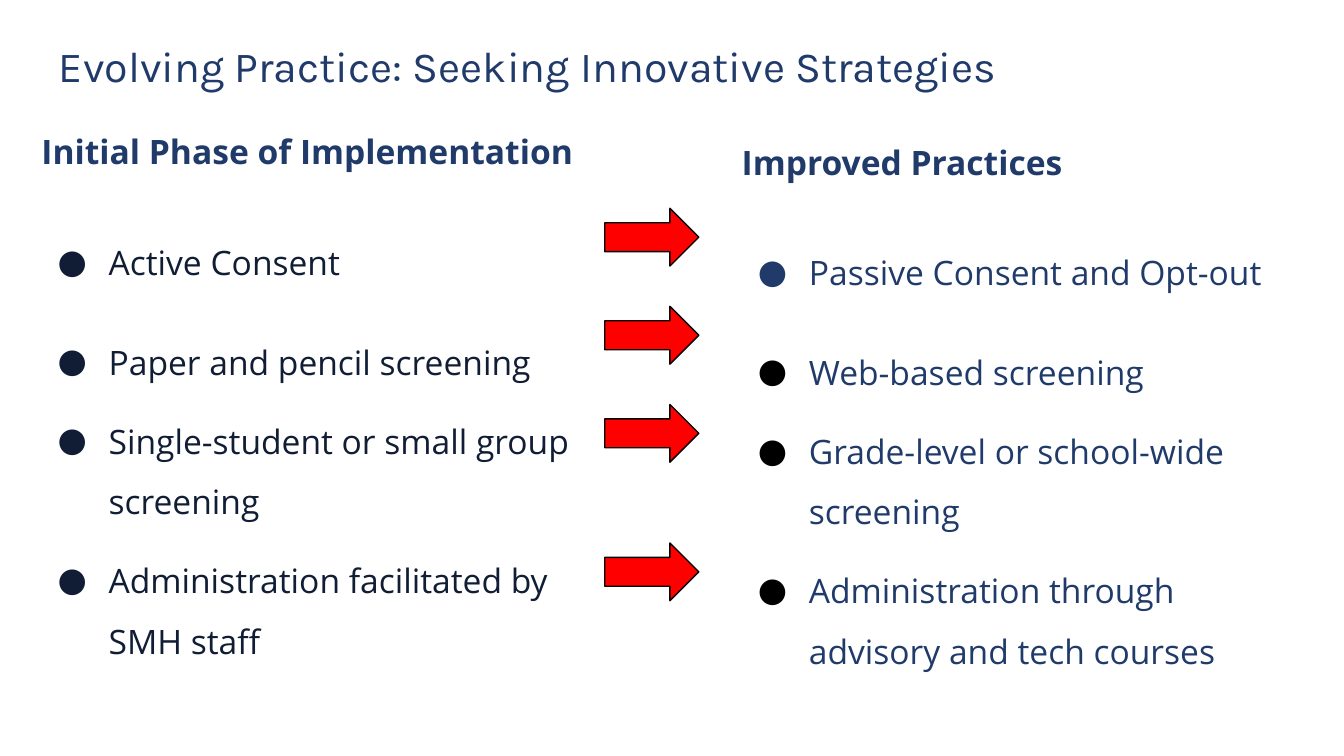
from lxml import etree
from pptx import Presentation
from pptx.dml.color import RGBColor
from pptx.enum.shapes import MSO_SHAPE
from pptx.enum.text import MSO_ANCHOR
from pptx.oxml.ns import qn
from pptx.util import Inches, Pt

RIGHT_ARROW = MSO_SHAPE.RIGHT_ARROW
TOP, BOTTOM = MSO_ANCHOR.TOP, MSO_ANCHOR.BOTTOM
COLORS = {"navy": "203B6A", "ink": "101D34", "red": "FF0000", "black": "000000"}
ARROW_TOPS = [1.55, 2.28, 3.01, 4.04]
LINE_SPACINGS = [2.0, 2.0, 1.5, 1.5]
INITIAL = [
    "Active Consent",
    "Paper and pencil screening",
    "Single-student or small group screening",
    "Administration facilitated by SMH staff",
]
IMPROVED = [
    "Passive Consent and Opt-out",
    "Web-based screening",
    "Grade-level or school-wide screening",
    "Administration through advisory and tech courses",
]


def rgb(name):
    """Return the named colour."""
    return RGBColor.from_string(COLORS[name])


def add_box(s, left, top, width, height, anchor=TOP):
    """Add a wrapping text box and return its text frame."""
    sp = s.shapes.add_textbox(Inches(left), Inches(top), Inches(width), Inches(height))
    tf = sp.text_frame
    tf.word_wrap = True
    tf.vertical_anchor = anchor
    tf.margin_left = tf.margin_right = Inches(0.1)
    tf.margin_top = tf.margin_bottom = Inches(0.1)
    return tf


def write(p, text, size=18, font="Open Sans", color="navy", bold=False,
          spacing=0.9, before=0, after=0):
    """Write one formatted run into a paragraph."""
    p.line_spacing = spacing
    p.space_before, p.space_after = Pt(before), Pt(after)
    r = p.add_run()
    r.text = text
    r.font.size, r.font.name, r.font.bold = Pt(size), font, bold
    r.font.color.rgb = rgb(color)


def add_bullet(p, color):
    """Give a paragraph a hanging round bullet."""
    pPr = p._p.get_or_add_pPr()
    pPr.set("marL", str(Inches(0.5)))
    pPr.set("indent", str(Inches(-0.38)))
    buClr = etree.SubElement(pPr, qn("a:buClr"))
    etree.SubElement(buClr, qn("a:srgbClr"), val=COLORS[color])
    etree.SubElement(pPr, qn("a:buFont"), typeface="Karla")
    etree.SubElement(pPr, qn("a:buChar"), char="●")


def add_column(s, left, heading, items, color, bullet_colors, heading_spacing):
    """Add a bold heading with its bulleted practices."""
    tf = add_box(s, left, 0.91, 4.45, 4.17)
    write(tf.paragraphs[0], heading, bold=True, spacing=heading_spacing)
    last = len(items) - 1
    for i, (item, spacing, bullet) in enumerate(zip(items, LINE_SPACINGS, bullet_colors)):
        p = tf.add_paragraph()
        write(p, item, color=color, spacing=spacing,
              before=10 if i else 16, after=10 if i == last else 0)
        add_bullet(p, bullet)


def add_arrow(s, top):
    """Add a red arrow from an initial practice to its improvement."""
    sp = s.shapes.add_shape(RIGHT_ARROW, Inches(4.5), Inches(top), Inches(0.7), Inches(0.43))
    sp.shadow.inherit = False
    sp.fill.solid()
    sp.fill.fore_color.rgb = rgb("red")
    sp.line.color.rgb = rgb("black")
    sp.line.width = Pt(0.75)


def main():
    """Build and save the slide."""
    prs = Presentation()
    prs.slide_width = Inches(10)
    prs.slide_height = prs.slide_width * 9 // 16
    s = prs.slides.add_slide(prs.slide_layouts[6])
    title = add_box(s, 0.34, 0.35, 9.32, 0.43, anchor=BOTTOM)
    write(title.paragraphs[0], "Evolving Practice: Seeking Innovative Strategies",
          size=23, font="Karla")
    add_column(s, 0.21, "Initial Phase of Implementation", INITIAL, "ink",
               ["ink"] * 4, 0.9)
    add_column(s, 5.42, "Improved Practices", IMPROVED, "navy",
               ["navy"] + ["black"] * 3, 1.15)
    for top in ARROW_TOPS:
        add_arrow(s, top)
    prs.save("out.pptx")


if __name__ == "__main__":
    main()
